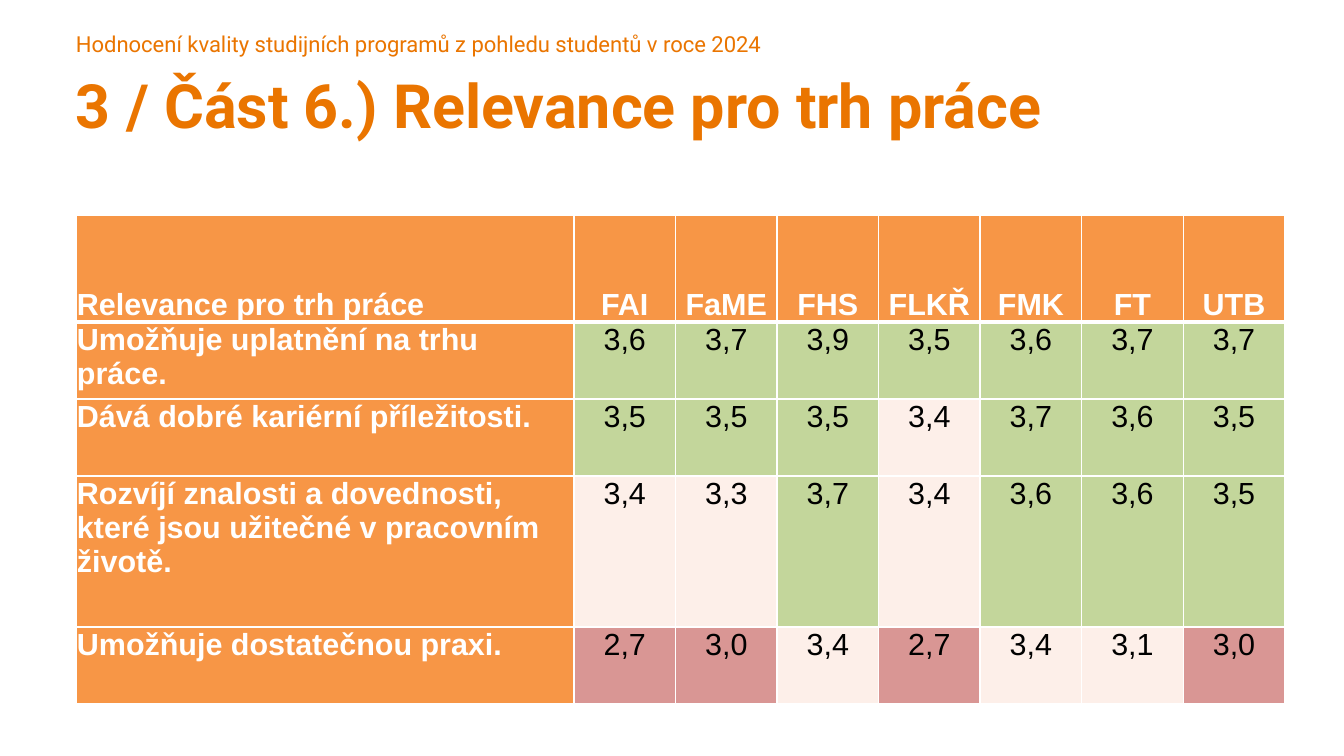
from lxml.etree import SubElement
from pptx import Presentation
from pptx.dml.color import RGBColor
from pptx.enum.text import MSO_ANCHOR as Anchor, MSO_AUTO_SIZE as AutoSize, PP_ALIGN as Align
from pptx.oxml.ns import qn
from pptx.util import Emu, Pt

EMU_PER_PX = 7495
COLORS = {
    "title": "EA7500", "label": "F79646", "white": "FFFFFF", "black": "000000",
    "high": "C3D69B", "middle": "FDEFE9", "low": "D99694",
}
FACULTIES = ["FAI", "FaME", "FHS", "FLKŘ", "FMK", "FT", "UTB"]
RATINGS = [
    ("Umožňuje uplatnění na trhu práce.", [3.6, 3.7, 3.9, 3.5, 3.6, 3.7, 3.7]),
    ("Dává dobré kariérní příležitosti.", [3.5, 3.5, 3.5, 3.4, 3.7, 3.6, 3.5]),
    ("Rozvíjí znalosti a dovednosti, které jsou užitečné v pracovním životě.",
     [3.4, 3.3, 3.7, 3.4, 3.6, 3.6, 3.5]),
    ("Umožňuje dostatečnou praxi.", [2.7, 3.0, 3.4, 2.7, 3.4, 3.1, 3.0]),
]
ROW_HEIGHTS = [107, 77, 77, 151, 77]


def px(length):
    return Emu(round(length * EMU_PER_PX))


def rating_color(value):
    if value >= 3.5:
        return "high"
    return "middle" if value > 3 else "low"


class SlideBuilder:
    def __init__(self, deck):
        self.page = deck.slides.add_slide(deck.slide_layouts[5])

    def style(self, para, size, font, color, bold=False, align=Align.LEFT):
        para.alignment = align
        para.font.size = Pt(size)
        para.font.name = font
        para.font.bold = bold
        para.font.color.rgb = RGBColor.from_string(COLORS[color])

    def fill_text(self, box, text, size, bold=False):
        frame = box.text_frame
        frame.word_wrap = True
        frame.auto_size = AutoSize.NONE
        frame.vertical_anchor = Anchor.TOP
        frame.margin_left = frame.margin_top = frame.margin_right = frame.margin_bottom = 0
        frame.text = text
        self.style(frame.paragraphs[0], size, "Roboto", "title", bold)

    def title(self, text, left, top, width, height):
        box = self.page.shapes.title
        box.left, box.top, box.width, box.height = map(px, (left, top, width, height))
        self.fill_text(box, text, 36, bold=True)

    def text(self, text, left, top, width, height):
        box = self.page.shapes.add_textbox(*map(px, (left, top, width, height)))
        self.fill_text(box, text, 13)

    def table(self, left, top, width, label_width, row_heights, column_count):
        frame = self.page.shapes.add_table(
            len(row_heights), column_count, px(left), px(top), px(width), px(sum(row_heights)))
        table = frame.table
        table.first_row = table.horz_banding = False
        for index, column in enumerate(table.columns):
            column.width = px(label_width if index == 0 else
                              (width - label_width) / (column_count - 1))
        for row, height in zip(table.rows, row_heights):
            row.height = px(height)
        return table

    def borders(self, cell, top=1, bottom=1):
        properties = cell._tc.get_or_add_tcPr()
        for side, points in (("L", 1), ("R", 1), ("T", top), ("B", bottom)):
            line = SubElement(properties, qn(f"a:ln{side}"), w=str(Pt(points)))
            paint = SubElement(line, qn("a:solidFill"))
            SubElement(paint, qn("a:srgbClr"), val=COLORS["white"])

    def cell(self, cell, text, fill, color="white", bold=True, align=Align.LEFT,
             anchor=Anchor.TOP, top=1, bottom=1):
        self.borders(cell, top, bottom)
        cell.fill.solid()
        cell.fill.fore_color.rgb = RGBColor.from_string(COLORS[fill])
        cell.margin_left = cell.margin_right = cell.margin_top = px(1)
        cell.margin_bottom = 0
        cell.vertical_anchor = anchor
        cell.text = text
        self.style(cell.text_frame.paragraphs[0], 18, "Arial", color, bold, align)


def main():
    deck = Presentation()
    deck.slide_width, deck.slide_height = px(1344), px(756)
    slide = SlideBuilder(deck)

    # Headings
    slide.text("Hodnocení kvality studijních programů z pohledu studentů v roce 2024",
               76, 31, 1210, 27)
    slide.title("3 / Část 6.) Relevance pro trh práce", 76, 67, 1242, 148)

    # Table header
    table = slide.table(76, 215, 1209, 498, ROW_HEIGHTS, len(FACULTIES) + 1)
    slide.cell(table.cell(0, 0), "Relevance pro trh práce", "label",
               anchor=Anchor.BOTTOM, bottom=3)
    for column, faculty in enumerate(FACULTIES, 1):
        head = table.cell(0, column)
        slide.cell(head, faculty, "label", align=Align.CENTER, anchor=Anchor.BOTTOM, bottom=3)
        head.text_frame.paragraphs[0].line_spacing = 1.5

    # Ratings, coloured by level
    for row, (statement, values) in enumerate(RATINGS, 1):
        top = 3 if row == 1 else 1
        slide.cell(table.cell(row, 0), statement, "label", top=top)
        for column, value in enumerate(values, 1):
            slide.cell(table.cell(row, column), f"{value:.1f}".replace(".", ","),
                       rating_color(value), "black", False, Align.CENTER, top=top)

    deck.save("out.pptx")


if __name__ == "__main__":
    main()
